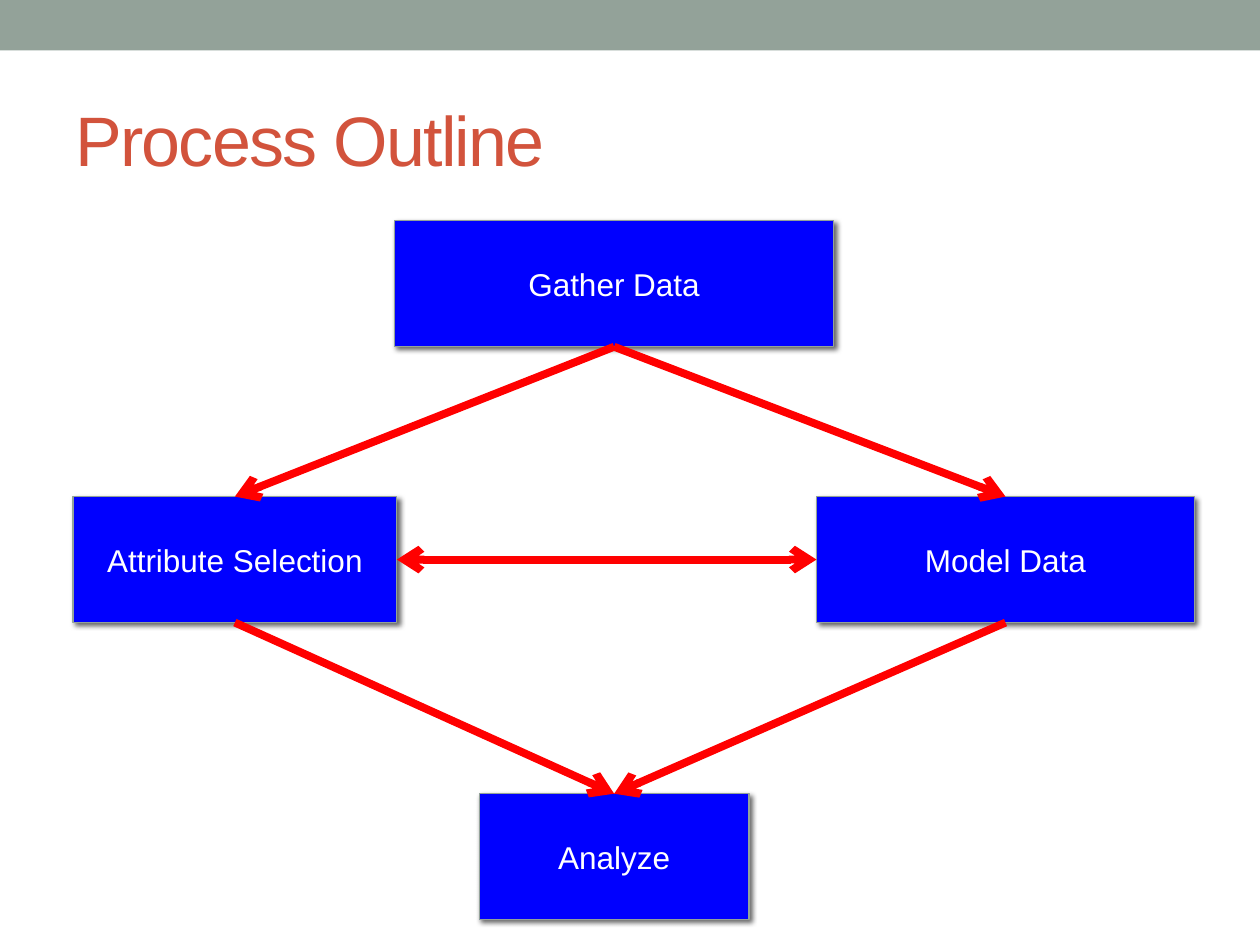
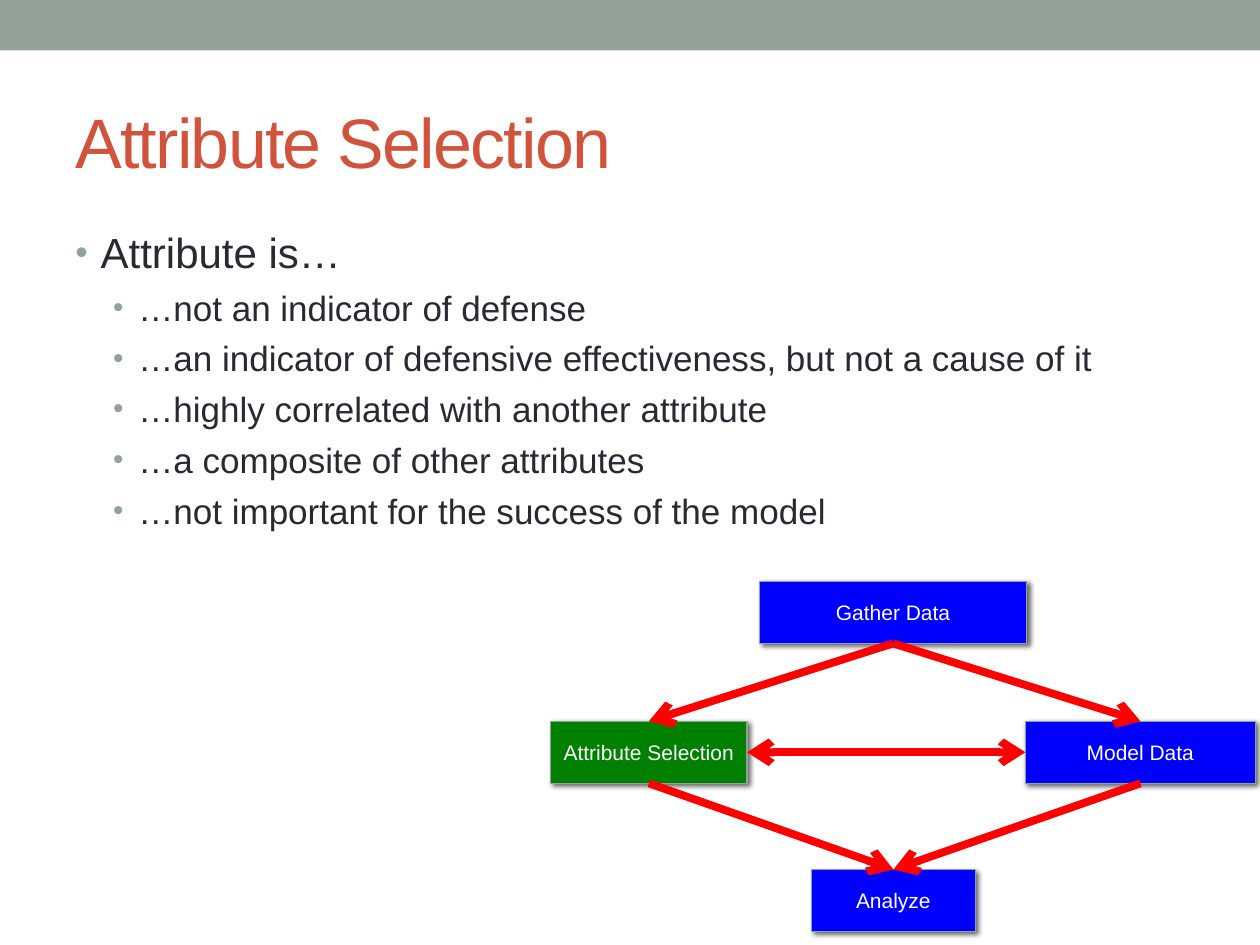
"""Build two slides on a data process: the outline and its attribute selection step."""
import dataclasses

import lxml.etree
import pptx
import pptx.dml.color
import pptx.enum.shapes
import pptx.enum.text
import pptx.oxml.ns
import pptx.util

Cm = pptx.util.Cm
Pt = pptx.util.Pt
qn = pptx.oxml.ns.qn
Anchor = pptx.enum.text.MSO_ANCHOR
Align = pptx.enum.text.PP_ALIGN


@dataclasses.dataclass(frozen=True)
class Theme:
    font: str = "Arial"
    sage: str = "93A299"
    title: str = "D2533C"
    body: str = "292934"
    white: str = "FFFFFF"
    step: str = "0000FF"
    current_step: str = "008000"
    arrow: str = "FF0000"
    shadow: str = "000000"
    title_size: int = 40
    lead_size: int = 24
    point_size: int = 20


theme = Theme()


def rgb(code):
    return pptx.dml.color.RGBColor.from_string(code)


def write(frame, text, *, size, color, align=Align.LEFT, anchor=Anchor.MIDDLE,
          tracking=0, indent=None, before=0):
    frame.word_wrap = True
    frame.vertical_anchor = anchor
    para = frame.add_paragraph() if frame.text else frame.paragraphs[0]
    para.alignment = align
    para.space_before = Pt(before)
    span = para.add_run()
    span.text = text
    span.font.name = theme.font
    span.font.size = Pt(size)
    span.font.color.rgb = rgb(color)
    if tracking:
        span.font._element.set("spc", str(tracking))
    if indent is not None:
        props = para._element.get_or_add_pPr()
        props.set("marL", str(Cm(indent)))
        props.set("indent", str(-Cm(0.51)))
        bullet_color = lxml.etree.SubElement(props, qn("a:buClr"))
        lxml.etree.SubElement(bullet_color, qn("a:srgbClr"), val=theme.sage)
        lxml.etree.SubElement(props, qn("a:buSzPct"), val="85000")
        lxml.etree.SubElement(props, qn("a:buFont"), typeface=theme.font)
        lxml.etree.SubElement(props, qn("a:buChar"), char="•")


arrows = [
    ("Gather Data", 2, "Attribute Selection", 0, False),
    ("Gather Data", 2, "Model Data", 0, False),
    ("Attribute Selection", 3, "Model Data", 1, True),
    ("Attribute Selection", 2, "Analyze", 0, False),
    ("Model Data", 2, "Analyze", 0, False),
]
slides = [
    {
        "title": "Process Outline", "title_top": 1.42, "points": [],
        "step_height": 2.54, "step_size": 18,
        "steps": {
            "Gather Data": (7.95, 4.45, 8.86),
            "Attribute Selection": (1.47, 10.01, 6.53),
            "Model Data": (16.46, 10.01, 7.62),
            "Analyze": (9.66, 16, 5.44),
        },
    },
    {
        "title": "Attribute Selection", "title_top": 1.47,
        "points": [
            "Attribute is…",
            "…not an indicator of defense",
            "…an indicator of defensive effectiveness, but not a cause of it",
            "…highly correlated with another attribute",
            "…a composite of other attributes",
            "…not important for the success of the model",
        ],
        "step_height": 1.25, "step_size": 12,
        "steps": {
            "Gather Data": (15.31, 11.72, 5.39),
            "Attribute Selection": (11.1, 14.54, 3.96),
            "Model Data": (20.67, 14.54, 4.64),
            "Analyze": (16.36, 17.53, 3.3),
        },
    },
]

deck = pptx.Presentation()
deck.slide_width = Cm(25.4)
deck.slide_height = Cm(19.05)
rectangle = pptx.enum.shapes.MSO_SHAPE.RECTANGLE
straight = pptx.enum.shapes.MSO_CONNECTOR.STRAIGHT

for content in slides:
    page = deck.slides.add_slide(deck.slide_layouts[6])

    band = page.shapes.add_shape(rectangle, 0, 0, deck.slide_width, Cm(1.02))
    band.shadow.inherit = False
    band.fill.solid()
    band.fill.fore_color.rgb = rgb(theme.sage)
    band.line.fill.background()

    title = page.shapes.add_textbox(Cm(1.27), Cm(content["title_top"]), Cm(22.86), Cm(2.74))
    write(title.text_frame, content["title"], size=theme.title_size,
          color=theme.title, tracking=-100)

    if content["points"]:
        body = page.shapes.add_textbox(Cm(1.27), Cm(4.45), Cm(22.86), Cm(13.54))
        for index, point in enumerate(content["points"]):
            write(body.text_frame, point, color=theme.body, anchor=Anchor.TOP,
                  size=theme.point_size if index else theme.lead_size,
                  indent=1.27 if index else 0.51, before=5)

    boxes = {}
    for name, (left, top, width) in content["steps"].items():
        box = page.shapes.add_shape(rectangle, Cm(left), Cm(top), Cm(width),
                                    Cm(content["step_height"]))
        box.fill.solid()
        box.fill.fore_color.rgb = rgb(
            theme.current_step if name == content["title"] else theme.step)
        box.line.color.rgb = rgb(theme.sage)
        box.line.width = Pt(0.75)
        box.shadow.inherit = False
        effects = box._element.spPr.find(qn("a:effectLst"))
        shadow = lxml.etree.SubElement(
            effects, qn("a:outerShdw"), blurRad=str(Pt(3)), dist=str(Pt(2)),
            dir="2700000", algn="tl", rotWithShape="0")
        shade = lxml.etree.SubElement(shadow, qn("a:srgbClr"), val=theme.shadow)
        lxml.etree.SubElement(shade, qn("a:alpha"), val="60000")
        box.text_frame.margin_left = box.text_frame.margin_right = Cm(0.1)
        write(box.text_frame, name, size=content["step_size"], color=theme.white,
              align=Align.CENTER)
        boxes[name] = box

    for source, source_side, target, target_side, two_way in arrows:
        arrow = page.shapes.add_connector(straight, 0, 0, 0, 0)
        arrow.begin_connect(boxes[source], source_side)
        arrow.end_connect(boxes[target], target_side)
        arrow.line.color.rgb = rgb(theme.arrow)
        arrow.line.width = Pt(4.5)
        props = arrow._element.spPr
        for tip in ("a:headEnd", "a:tailEnd") if two_way else ("a:tailEnd",):
            lxml.etree.SubElement(props.find(qn("a:ln")), qn(tip), type="arrow")
        lxml.etree.SubElement(props, qn("a:effectLst"))

deck.save("out.pptx")
